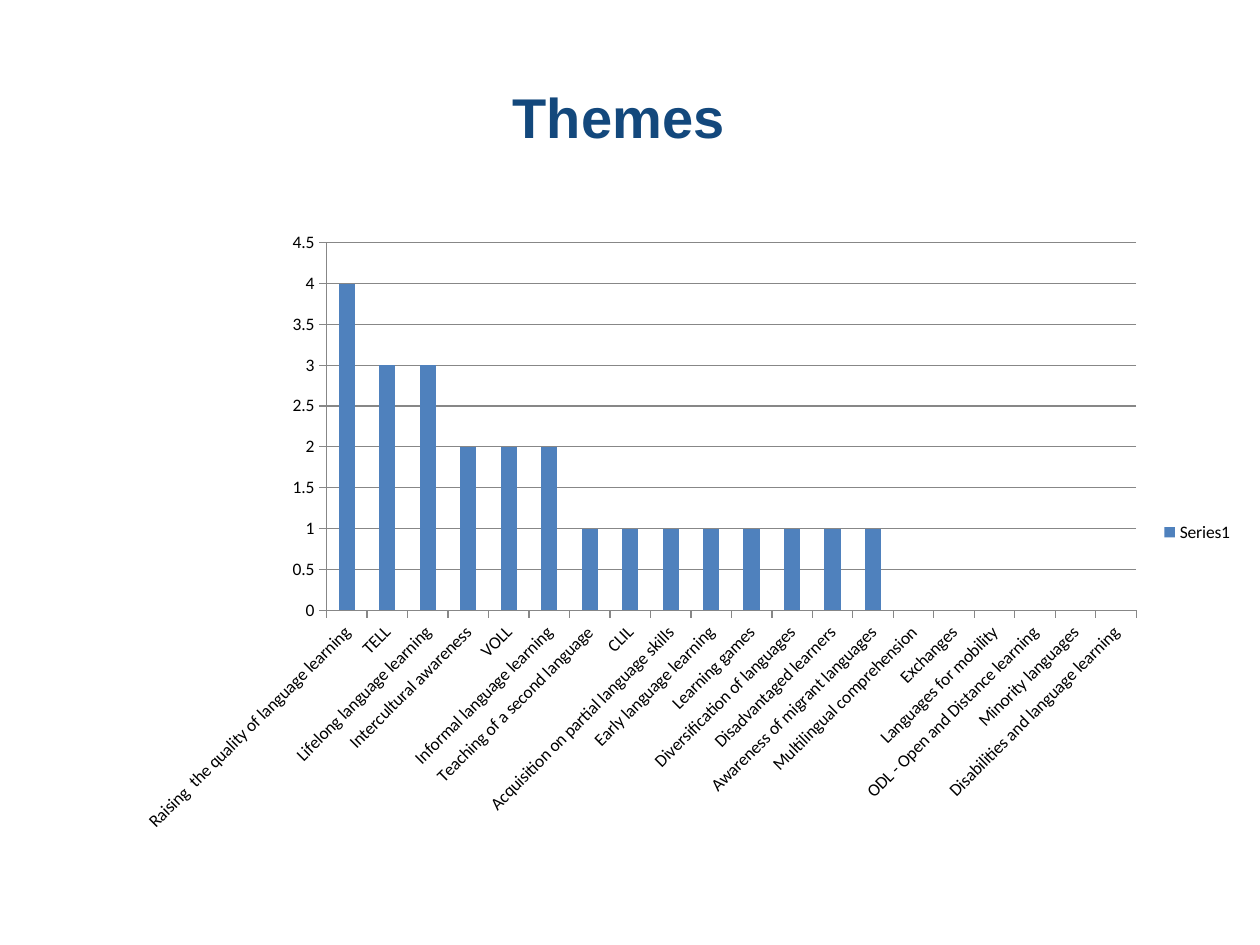
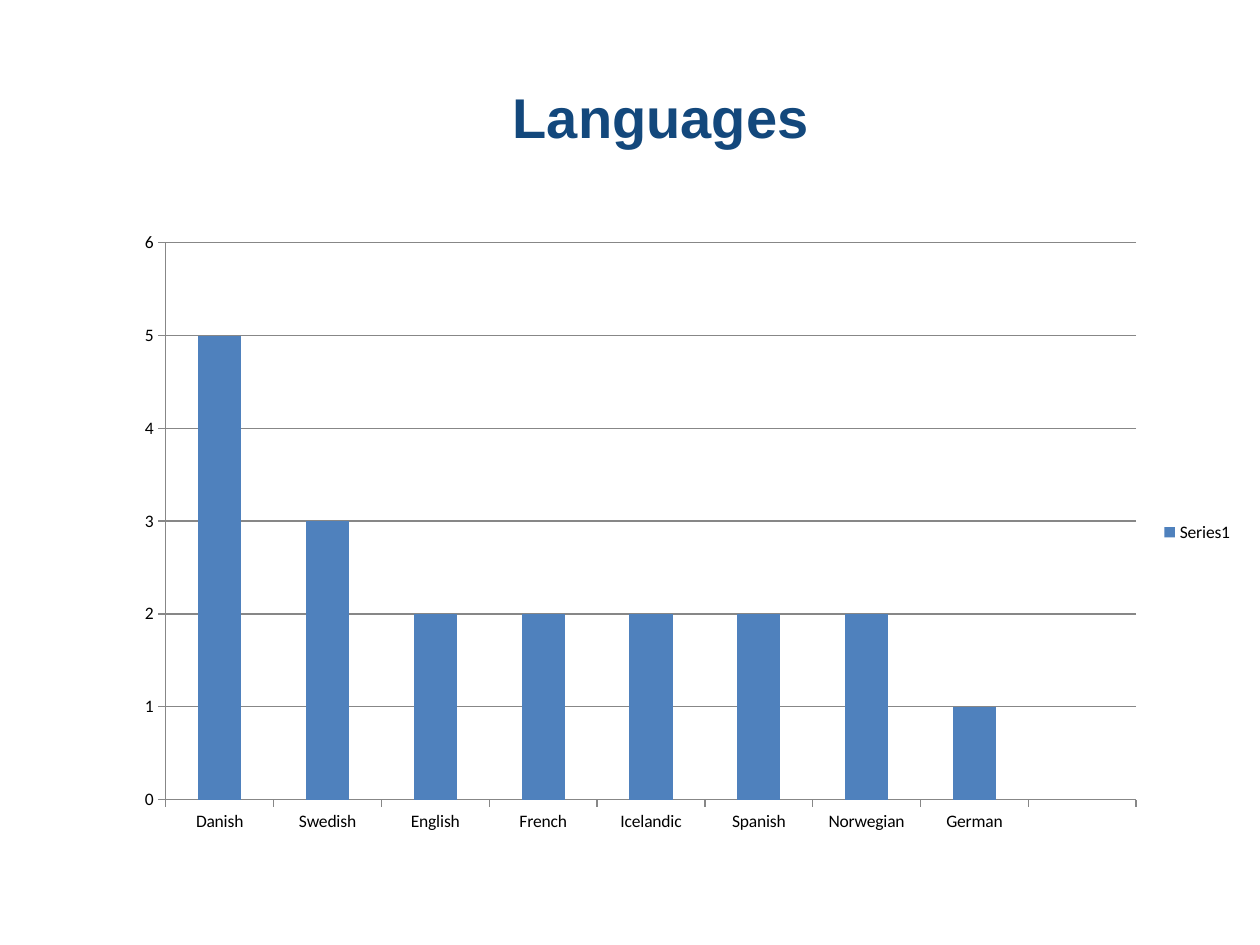
import dataclasses

import pptx
import pptx.chart.data
import pptx.dml.color
import pptx.enum.chart
import pptx.enum.text
import pptx.util


@dataclasses.dataclass(frozen=True)
class Theme:
    title_color: str = "13487C"
    bar_color: str = "4F81BD"
    line_color: str = "878787"
    text_color: str = "000000"
    title_font: str = "Arial"
    chart_font: str = "Calibri"
    title_size: int = 32
    chart_size: int = 10
    line_width: float = 0.75


THEME = Theme()
TITLE_ONLY = 5
SLIDE_SIZE = (pptx.util.Inches(10), pptx.util.Inches(7.5))
TITLE_PERCENT = (9.7, 4, 89.2, 16.67)
CHART_PERCENT = (9.7, 23.33, 89.2, 66)
TITLE_INDENT_PERCENT = 31

THEMES = {
    "Raising  the quality of language learning": 4,
    "TELL": 3,
    "Lifelong language learning": 3,
    "Intercultural awareness": 2,
    "VOLL": 2,
    "Informal language learning": 2,
    "Teaching of a second language": 1,
    "CLIL": 1,
    "Acquisition on partial language skills": 1,
    "Early language learning": 1,
    "Learning games": 1,
    "Diversification of languages": 1,
    "Disadvantaged learners": 1,
    "Awareness of migrant languages": 1,
    "Multilingual comprehension": None,
    "Exchanges": None,
    "Languages for mobility": None,
    "ODL - Open and Distance learning": None,
    "Minority languages": None,
    "Disabilities and language learning": None,
}

LANGUAGES = {
    "Danish": 5,
    "Swedish": 3,
    "English": 2,
    "French": 2,
    "Icelandic": 2,
    "Spanish": 2,
    "Norwegian": 2,
    "German": 1,
    "": None,
}


def rgb(color):
    return pptx.dml.color.RGBColor.from_string(color)


def place(percents):
    return [round(SLIDE_SIZE[index % 2] * percent / 100)
            for index, percent in enumerate(percents)]


def set_font(font, name, size, color):
    font.name = name
    font.size = pptx.util.Pt(size)
    font.color.rgb = rgb(color)


def set_title(page, text):
    title = page.shapes.title
    title.left, title.top, title.width, title.height = place(TITLE_PERCENT)
    frame = title.text_frame
    frame.text = text
    frame.margin_left = round(SLIDE_SIZE[0] * TITLE_INDENT_PERCENT / 100)
    frame.vertical_anchor = pptx.enum.text.MSO_ANCHOR.MIDDLE
    para = frame.paragraphs[0]
    para.alignment = pptx.enum.text.PP_ALIGN.LEFT
    set_font(para.font, THEME.title_font, THEME.title_size, THEME.title_color)
    para.font.bold = True


def style_line(line):
    line.color.rgb = rgb(THEME.line_color)
    line.width = pptx.util.Pt(THEME.line_width)


def style_axes(chart):
    for axis in (chart.category_axis, chart.value_axis):
        axis.major_tick_mark = pptx.enum.chart.XL_TICK_MARK.OUTSIDE
        axis.minor_tick_mark = pptx.enum.chart.XL_TICK_MARK.NONE
        style_line(axis.format.line)
    chart.category_axis.has_major_gridlines = False
    chart.value_axis.has_major_gridlines = True
    style_line(chart.value_axis.major_gridlines.format.line)


def add_column_chart(page, counts):
    data = pptx.chart.data.CategoryChartData()
    data.categories = list(counts)
    data.add_series("Series1", counts.values())
    chart = page.shapes.add_chart(
        pptx.enum.chart.XL_CHART_TYPE.COLUMN_STACKED, *place(CHART_PERCENT), data
    ).chart
    set_font(chart.font, THEME.chart_font, THEME.chart_size, THEME.text_color)
    chart.has_title = False
    chart.has_legend = True
    chart.legend.position = pptx.enum.chart.XL_LEGEND_POSITION.RIGHT
    chart.legend.include_in_layout = False
    plot = chart.plots[0]
    plot.vary_by_categories = False
    plot.gap_width = 150
    plot.overlap = 100
    fill = plot.series[0].format.fill
    fill.solid()
    fill.fore_color.rgb = rgb(THEME.bar_color)
    style_axes(chart)


def add_chart_page(deck, title, counts):
    page = deck.slides.add_slide(deck.slide_layouts[TITLE_ONLY])
    set_title(page, title)
    add_column_chart(page, counts)


def main():
    deck = pptx.Presentation()
    deck.slide_width, deck.slide_height = SLIDE_SIZE
    add_chart_page(deck, "Themes", THEMES)
    add_chart_page(deck, "Languages", LANGUAGES)
    deck.save("out.pptx")


if __name__ == "__main__":
    main()
